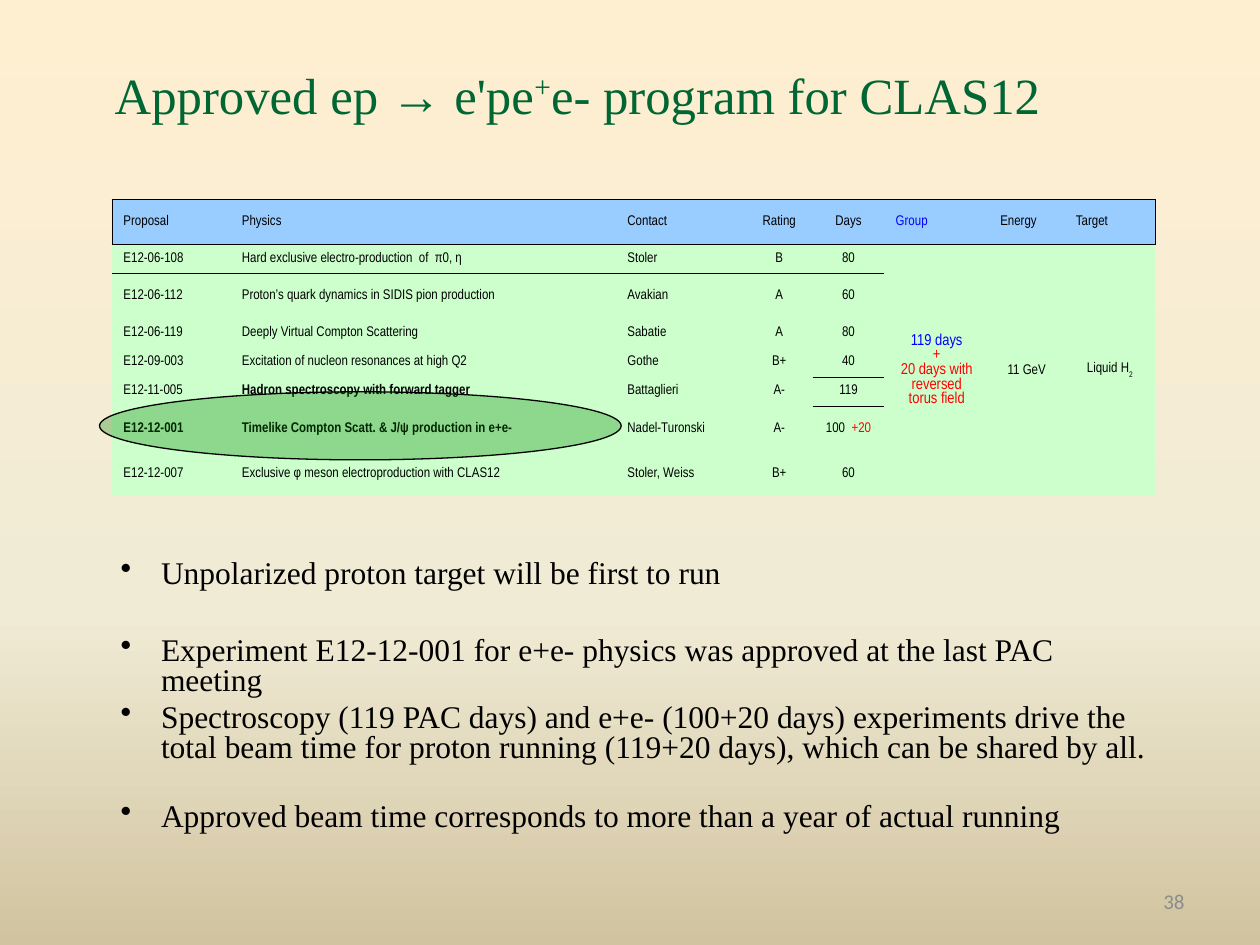
from pptx import Presentation
from pptx.dml.color import RGBColor
from pptx.enum.shapes import MSO_SHAPE as Shape
from pptx.enum.text import MSO_ANCHOR as Anchor, PP_ALIGN as Align
from pptx.oxml import parse_xml
from pptx.oxml.ns import nsdecls, qn
from pptx.util import Inches, Pt
from lxml.etree import SubElement

THEME = {
    "serif": "Times New Roman", "narrow": "Arial Narrow", "sans": "Calibri",
    "title": "006633", "ink": "000000", "blue": "0000FF", "red": "FF0000",
    "muted": "8C8C8C", "header": "99CCFF", "body": "CCFFCC", "highlight": "008000",
    "title_pt": 29, "bullet_pt": 18, "cell_pt": 8, "group_pt": 9, "number_pt": 12,
    "background": [(0, "FFEFD1"), (65, "F0EBD5"), (100, "D1C39F")],
}

TITLE = [("Approved ep → e'pe", {}), ("+", {"baseline": 33}),
         ("e- program for CLAS12", {})]
PAGE_NUMBER = "38"

BOLD = {"bold": True}
RED = {"color": "red"}
HEADER = ["Proposal", "Physics", "Contact", "Rating", "Days",
          [("Group", {"color": "blue"})], "Energy", "Target"]
PROPOSALS = [
    ["E12-06-108", "Hard exclusive electro-production  of  π0, η", "Stoler", "B", "80"],
    ["E12-06-112", "Proton’s quark dynamics in SIDIS pion production", "Avakian", "A", "60"],
    ["E12-06-119", "Deeply Virtual Compton Scattering", "Sabatie", "A", "80"],
    ["E12-09-003", "Excitation of nucleon resonances at high Q2", "Gothe", "B+", "40"],
    ["E12-11-005", [("Hadron spectroscopy with forward tagger", BOLD)],
     "Battaglieri", "A-", "119"],
    [[("E12-12-001", BOLD)],
     [("Timelike Compton Scatt. & J/ψ production in e+e-", BOLD)],
     "Nadel-Turonski", "A-", [("100  ", {}), ("+20", RED)]],
    ["E12-12-007", "Exclusive φ meson electroproduction with CLAS12",
     "Stoler, Weiss", "B+", "60"],
]
GROUP = [[("119 days", {"color": "blue"})], [("+", RED)],
         [("20 days with reversed torus field", RED)]]
ENERGY = ["11 GeV"]
TARGET = [[("Liquid H", {}), ("2", {"baseline": -33})]]
COLUMN_WIDTHS = [0.94, 3.06, 1.03, 0.53, 0.57, 0.83, 0.6, 0.72]
ROW_HEIGHTS = [0.36, 0.23, 0.36, 0.23, 0.23, 0.23, 0.36, 0.36]
CENTRED_COLUMNS = (3, 4)
SPACED_ROWS = (6, 7)
DAYS_COLUMN, RULED_ROW = 4, 4

BULLETS = [
    (4.4, "Unpolarized proton target will be first to run"),
    (5.01, "Experiment E12-12-001 for e+e- physics was approved at the last PAC meeting"),
    (5.54, "Spectroscopy (119 PAC days) and e+e- (100+20 days) experiments drive the "
           "total beam time for proton running (119+20 days), which can be shared by all."),
    (6.33, "Approved beam time corresponds to more than a year of actual running"),
]


def add_runs(paragraph, content, font, size, color="ink"):
    runs = [(content, {})] if isinstance(content, str) else content
    for words, style in runs:
        run = paragraph.add_run()
        run.text = words
        run.font.name = THEME[font]
        run.font.size = Pt(THEME[size])
        run.font.bold = style.get("bold", False)
        run.font.color.rgb = RGBColor.from_string(THEME[style.get("color", color)])
        if "baseline" in style:
            run.font._element.set("baseline", str(style["baseline"] * 1000))


def set_background(slide):
    stops = "".join(
        f'<a:gs pos="{at * 1000}"><a:srgbClr val="{color}"/></a:gs>'
        for at, color in THEME["background"])
    slide.element.cSld.insert(0, parse_xml(
        f'<p:bg {nsdecls("p", "a")}><p:bgPr><a:gradFill rotWithShape="1">'
        f'<a:gsLst>{stops}</a:gsLst><a:lin ang="5400000" scaled="0"/></a:gradFill>'
        f'<a:effectLst/></p:bgPr></p:bg>'))


def add_box(slide, left, top, width, height):
    frame = slide.shapes.add_textbox(*map(Inches, (left, top, width, height))).text_frame
    frame.word_wrap = True
    return frame


def add_title(slide):
    title = slide.shapes.title
    title.left, title.top, title.width, title.height = map(Inches, (0.81, 0.37, 8.83, 0.75))
    title.text_frame.vertical_anchor = Anchor.MIDDLE
    heading = title.text_frame.paragraphs[0]
    heading.alignment = Align.LEFT
    add_runs(heading, TITLE, "serif", "title_pt", "title")


def fill_cell(cell, lines, fill, size="cell_pt", centred=False, before=0):
    cell.vertical_anchor = Anchor.MIDDLE
    cell.margin_left = cell.margin_right = Inches(0.09)
    cell.fill.solid()
    cell.fill.fore_color.rgb = RGBColor.from_string(THEME[fill])
    for index, line in enumerate(lines):
        frame = cell.text_frame
        paragraph = frame.add_paragraph() if index else frame.paragraphs[0]
        paragraph.alignment = Align.CENTER if centred else Align.LEFT
        paragraph.line_spacing = 0.98
        paragraph.space_before = Pt(before)
        add_runs(paragraph, line, "narrow", size)


def set_borders(cell, sides, width):
    properties = cell._tc.get_or_add_tcPr()
    for index, side in enumerate(sides):
        properties.insert(index, parse_xml(
            f'<a:ln{side} {nsdecls("a")} w="{Pt(width)}"><a:solidFill>'
            f'<a:srgbClr val="{THEME["ink"]}"/></a:solidFill></a:ln{side}>'))


def add_proposal_table(slide):
    table = slide.shapes.add_table(
        len(ROW_HEIGHTS), len(COLUMN_WIDTHS), Inches(0.89), Inches(1.58),
        Inches(sum(COLUMN_WIDTHS)), Inches(sum(ROW_HEIGHTS))).table
    table.first_row = table.horz_banding = False
    table._tbl.tblPr.find(qn("a:tableStyleId")).text = "{2D5ABB26-0587-4C30-8999-92F81FD0307C}"
    for column, width in zip(table.columns, COLUMN_WIDTHS):
        column.width = Inches(width)
    for row, height in zip(table.rows, ROW_HEIGHTS):
        row.height = Inches(height)

    for r, entries in enumerate([HEADER] + PROPOSALS):
        for c, entry in enumerate(entries):
            fill_cell(table.cell(r, c), [entry], "body" if r else "header",
                      centred=c in CENTRED_COLUMNS, before=3.6 if r in SPACED_ROWS else 0)

    shared = [(GROUP, "group_pt"), (ENERGY, "cell_pt"), (TARGET, "cell_pt")]
    last_row = len(PROPOSALS)
    for c, (lines, size) in enumerate(shared, DAYS_COLUMN + 1):
        table.cell(1, c).merge(table.cell(last_row, c))
        fill_cell(table.cell(1, c), lines, "body", size, centred=True)

    last_column = len(HEADER) - 1
    for c in range(len(HEADER)):
        outer = {0: ["L"], last_column: ["R"]}.get(c, [])
        set_borders(table.cell(0, c), outer + ["T", "B"], 0.75)
        set_borders(table.cell(1, c), ["T"], 0.75)
    set_borders(table.cell(RULED_ROW, DAYS_COLUMN), ["B"], 0.11)
    set_borders(table.cell(RULED_ROW + 1, DAYS_COLUMN), ["T"], 0.11)


def add_highlight(slide):
    highlight = slide.shapes.add_shape(Shape.OVAL, *map(Inches, (0.79, 3.11, 4.14, 0.54)))
    highlight.shadow.inherit = False
    highlight.fill.solid()
    highlight.fill.fore_color.rgb = RGBColor.from_string(THEME["highlight"])
    color = highlight._element.spPr.find(qn("a:solidFill"))[0]
    SubElement(color, qn("a:alpha")).set("val", "30000")
    highlight.line.color.rgb = RGBColor.from_string(THEME["ink"])
    highlight.line.width = Pt(0.75)


def add_bullet(slide, top, words):
    paragraph = add_box(slide, 0.86, top, 8.43, 0.48).paragraphs[0]
    paragraph.line_spacing = 0.8
    paragraph.space_before = Pt(5.4)
    properties = paragraph._p.get_or_add_pPr()
    properties.set("marL", str(Inches(0.32)))
    properties.set("indent", str(-Inches(0.32)))
    SubElement(properties, qn("a:buChar")).set("char", "•")
    add_runs(paragraph, words, "serif", "bullet_pt")


def add_page_number(slide):
    frame = add_box(slide, 7.17, 6.95, 2.33, 0.4)
    frame.vertical_anchor = Anchor.MIDDLE
    frame.paragraphs[0].alignment = Align.RIGHT
    add_runs(frame.paragraphs[0], PAGE_NUMBER, "sans", "number_pt", "muted")


def main():
    deck = Presentation()
    deck.slide_width, deck.slide_height = Inches(10), Inches(7.5)
    slide = deck.slides.add_slide(deck.slide_layouts[5])
    set_background(slide)
    add_title(slide)
    add_proposal_table(slide)
    add_highlight(slide)
    for top, words in BULLETS:
        add_bullet(slide, top, words)
    add_page_number(slide)
    deck.save("out.pptx")


if __name__ == "__main__":
    main()
